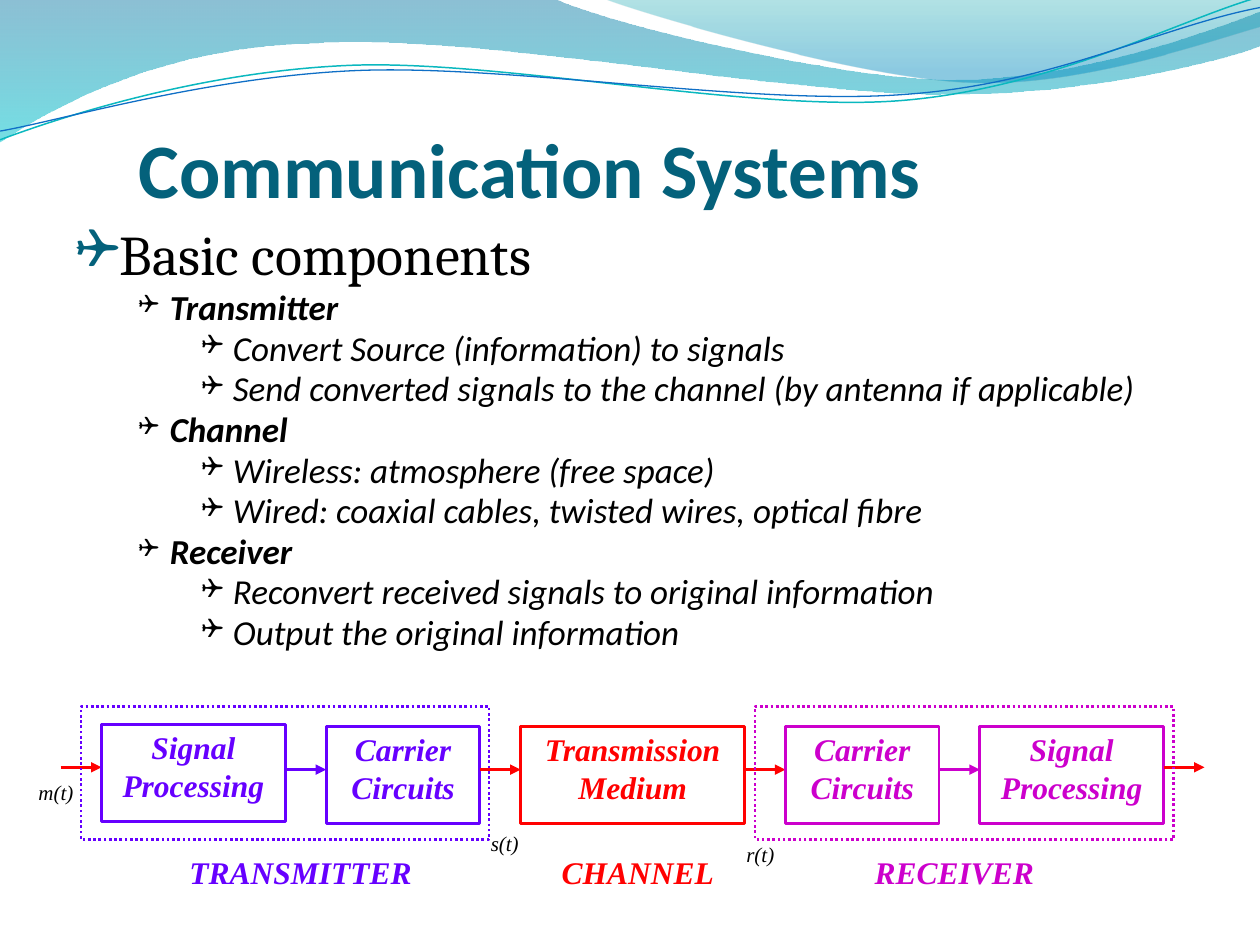
from lxml.etree import SubElement
from pptx import Presentation
from pptx.dml.color import RGBColor
from pptx.enum.dml import MSO_LINE
from pptx.enum.shapes import MSO_CONNECTOR, MSO_SHAPE
from pptx.enum.text import MSO_ANCHOR, MSO_AUTO_SIZE, PP_ALIGN
from pptx.oxml.ns import qn
from pptx.util import Pt

BLACK = RGBColor(0x00, 0x00, 0x00)
TEAL = RGBColor(0x04, 0x61, 0x7B)
VIOLET = RGBColor(0x66, 0x00, 0xFF)
RED = RGBColor(0xFF, 0x01, 0x01)
MAGENTA = RGBColor(0xCC, 0x00, 0xCC)
WAVE_TEAL = RGBColor(0x0A, 0xB8, 0xBF)
WAVE_BLUE = RGBColor(0x0F, 0x6F, 0xC6)
BAND_TOP = RGBColor(0x00, 0x74, 0xA1)
BAND_BOTTOM = RGBColor(0x00, 0xC6, 0xCF)
CREST_TOP = RGBColor(0x00, 0xA1, 0xA9)
CREST_BOTTOM = RGBColor(0x00, 0x8B, 0xBF)
SERIF = "Times New Roman"

# Wave outlines in points: a pair is a straight step, six numbers are a Bezier step
BAND = [(0, 0), (316.8, -0.7), (342.7, 12.2, 478.1, 45.4, 545.8, 45.4),
        (614.2, 45.4, 689.8, 18.7, 720, 6.5), (720.7, 25.9),
        (707.8, 31.7, 626.4, 54.7, 537.1, 54), (447.8, 54, 275, 20.2, 185, 24.5),
        (92.9, 25.9, 33.1, 59.8, -0.7, 81.4)]
CREST = [(344.9, -0.7), (366.5, 7.9, 491, 44.6, 553.7, 46.8),
         (616.3, 49.7, 691.9, 23, 720, 15.1), (720, 0)]
TEAL_WAVE = [(0, 79.9), (34.6, 67, 113.8, 41, 199.4, 37.4),
             (284.4, 33.8, 427, 64.1, 513.4, 57.6), (599.8, 51.1, 675.4, 10.8, 718.6, -1.4)]
BLUE_WAVE = [(0, 74.9), (33.8, 69.1, 118.1, 43.9, 203.8, 40.3),
             (290.2, 36.7, 429.8, 60.5, 516.2, 54), (601.9, 48.2, 663.1, 15.1, 720, 4.3)]

# Outline level and text
OUTLINE = [
    (0, "Basic components"),
    (1, "Transmitter"),
    (2, "Convert Source (information) to signals"),
    (2, "Send converted signals to the channel (by antenna if applicable)"),
    (1, "Channel"),
    (2, "Wireless: atmosphere (free space)"),
    (2, "Wired: coaxial cables, twisted wires, optical fibre"),
    (1, "Receiver"),
    (2, "Reconvert received signals to original information"),
    (2, "Output the original information"),
]
# Left margin, hanging indent, font size, font, bullet colour, bullet percentage
LEVELS = [(58.5, 22.5, 32, "Cambria", TEAL, 100),
          (90, 18, 20, "Calibri", BLACK, 75),
          (126, 18, 20, "Calibri", BLACK, 80)]

# Text, width, top, colour, colour and height of the arrow that follows
BLOCKS = [
    ("Signal\nProcessing", 105.1, 413.9, VIOLET, VIOLET, 439.8),
    ("Carrier\nCircuits", 87.8, 415.2, VIOLET, RED, 439.8),
    ("Transmission Medium", 128, 415.2, RED, RED, 439.8),
    ("Carrier Circuits", 87.8, 415.2, MAGENTA, MAGENTA, 439.8),
    ("Signal\nProcessing", 105.1, 415.2, MAGENTA, RED, 438.5),
]
BLOCK_HEIGHT = 55.5
ARROW_LENGTH = 23.3
FRAMES = [(46.3, 233.3, VIOLET), (431.5, 239, MAGENTA)]
CAPTIONS = [("TRANSMITTER", 81.4, VIOLET), ("CHANNEL", 274.1, RED),
            ("RECEIVER", 455, MAGENTA)]
SIGNALS = [("m(t)", 11.5, 443.5), ("s(t)", 268, 472.3), ("r(t)", 414, 478.8)]


def add_outline(slide, steps, close):
    """Draw straight and Bezier steps as one freeform."""
    points = [(Pt(x), Pt(y)) for step in steps for x, y in zip(step[::2], step[1::2])]
    builder = slide.shapes.build_freeform(*points[0], scale=1.0)
    builder.add_line_segments(points[1:], close=close)
    shape = builder.convert_to_shape()
    shape.shadow.inherit = False
    # Join each three segments of a Bezier step into one curve
    segments = iter(list(shape._element.iter(qn("a:lnTo"))))
    for step in steps[1:]:
        segment = next(segments)
        if len(step) == 6:
            segment.tag = qn("a:cubicBezTo")
            for _ in range(2):
                control = next(segments)
                segment.append(control[0])
                control.getparent().remove(control)
    return shape


def add_gradient_wave(slide, steps, stops):
    shape = add_outline(slide, steps, True)
    shape.line.fill.background()
    shape.fill.gradient()
    shape.fill.gradient_angle = 270
    for stop, (position, color, _) in zip(shape.fill.gradient_stops, stops):
        stop.position = position
        stop.color.rgb = color
    for element, (_, _, opacity) in zip(shape._element.spPr.iter(qn("a:srgbClr")), stops):
        SubElement(element, qn("a:alpha"), val=str(opacity * 1000))


def add_line_wave(slide, steps, color, width):
    shape = add_outline(slide, steps, False)
    shape.fill.background()
    shape.line.color.rgb = color
    shape.line.width = Pt(width)


def add_run(paragraph, text, size, font, color, bold=False, italic=False):
    run = paragraph.add_run()
    run.text = text
    run.font.size = Pt(size)
    run.font.name = font
    run.font.color.rgb = color
    run.font.bold = bold
    run.font.italic = italic


def write_label(shape, text, size, color, bold):
    frame = shape.text_frame
    frame.word_wrap = True
    frame.vertical_anchor = MSO_ANCHOR.TOP
    frame.margin_left = frame.margin_right = Pt(4.3)
    frame.margin_top = frame.margin_bottom = Pt(2.2)
    paragraph = frame.paragraphs[0]
    paragraph.alignment = PP_ALIGN.CENTER
    for index, line in enumerate(text.split("\n")):
        if index:
            paragraph.add_line_break()
        add_run(paragraph, line, size, SERIF, color, bold, True)


def add_label(slide, text, left, top, width, height, size, color, bold):
    box = slide.shapes.add_textbox(Pt(left), Pt(top), Pt(width), Pt(height))
    write_label(box, text, size, color, bold)


def add_box(slide, left, top, width, height, color):
    shape = slide.shapes.add_shape(MSO_SHAPE.RECTANGLE, Pt(left), Pt(top),
                                   Pt(width), Pt(height))
    shape.shadow.inherit = False
    shape.fill.background()
    shape.line.color.rgb = color
    shape.line.width = Pt(1.5)
    return shape


def add_arrow(slide, left, y, color):
    arrow = slide.shapes.add_connector(MSO_CONNECTOR.STRAIGHT, Pt(left), Pt(y),
                                       Pt(left + ARROW_LENGTH), Pt(y))
    arrow.line.color.rgb = color
    arrow.line.width = Pt(1.5)
    SubElement(arrow.line._get_or_add_ln(), qn("a:tailEnd"), type="triangle")
    SubElement(arrow._element.spPr, qn("a:effectLst"))


def add_title(slide, text):
    title = slide.shapes.title
    title.left, title.top, title.width, title.height = Pt(72), Pt(66.2), Pt(612), Pt(46)
    frame = title.text_frame
    frame.auto_size = MSO_AUTO_SIZE.NONE
    frame.vertical_anchor = MSO_ANCHOR.TOP
    frame.margin_top = Pt(3.1)
    frame.paragraphs[0].alignment = PP_ALIGN.LEFT
    add_run(frame.paragraphs[0], text, 44, "Calibri", TEAL, bold=True)


def add_bullets(slide):
    frame = slide.shapes.add_textbox(Pt(0), Pt(129.6), Pt(720), Pt(266.4)).text_frame
    frame.word_wrap = True
    for index, (level, text) in enumerate(OUTLINE):
        margin, hanging, size, font, color, percent = LEVELS[level]
        paragraph = frame.add_paragraph() if index else frame.paragraphs[0]
        paragraph.level = level
        paragraph.line_spacing = 0.8
        paragraph.space_before = Pt(size * 0.2)
        properties = paragraph._p.get_or_add_pPr()
        properties.set("marL", str(Pt(margin)))
        properties.set("indent", str(-Pt(hanging)))
        SubElement(SubElement(properties, qn("a:buClr")), qn("a:srgbClr"), val=str(color))
        SubElement(properties, qn("a:buSzPct"), val=str(percent * 1000))
        SubElement(properties, qn("a:buFont"), typeface="Wingdings")
        SubElement(properties, qn("a:buChar"), char="❑")
        add_run(paragraph, text, size, font, BLACK, bold=level == 1, italic=level > 0)


def add_block_diagram(slide):
    # Chain of blocks and arrows, from left to right
    left = 34.7
    add_arrow(slide, left, 438.5, RED)
    for text, width, top, color, arrow_color, arrow_y in BLOCKS:
        left += ARROW_LENGTH
        block = add_box(slide, left, top, width, BLOCK_HEIGHT, color)
        write_label(block, text, 18, color, True)
        left += width
        add_arrow(slide, left, arrow_y, arrow_color)
    # Dotted frames, captions and signal names
    for left, width, color in FRAMES:
        add_box(slide, left, 403.7, width, 76, color).line.dash_style = MSO_LINE.ROUND_DOT
    for text, left, color in CAPTIONS:
        add_label(slide, text, left, 485.3, 180.7, 30.2, 18, color, True)
    for text, left, top in SIGNALS:
        add_label(slide, text, left, top, 41, 26, 12, BLACK, False)


def main():
    presentation = Presentation()
    presentation.slide_width, presentation.slide_height = Pt(720), Pt(540)
    slide = presentation.slides.add_slide(presentation.slide_layouts[5])
    # Wave decoration along the top
    add_gradient_wave(slide, BAND, [(0, BAND_TOP, 45), (1, BAND_BOTTOM, 55)])
    add_gradient_wave(slide, CREST, [(0, CREST_TOP, 30), (0.8, CREST_BOTTOM, 45)])
    add_line_wave(slide, TEAL_WAVE, WAVE_TEAL, 0.85)
    add_line_wave(slide, BLUE_WAVE, WAVE_BLUE, 0.75)
    # Content
    add_title(slide, "Communication Systems")
    add_bullets(slide)
    add_block_diagram(slide)
    presentation.save("out.pptx")


if __name__ == "__main__":
    main()
